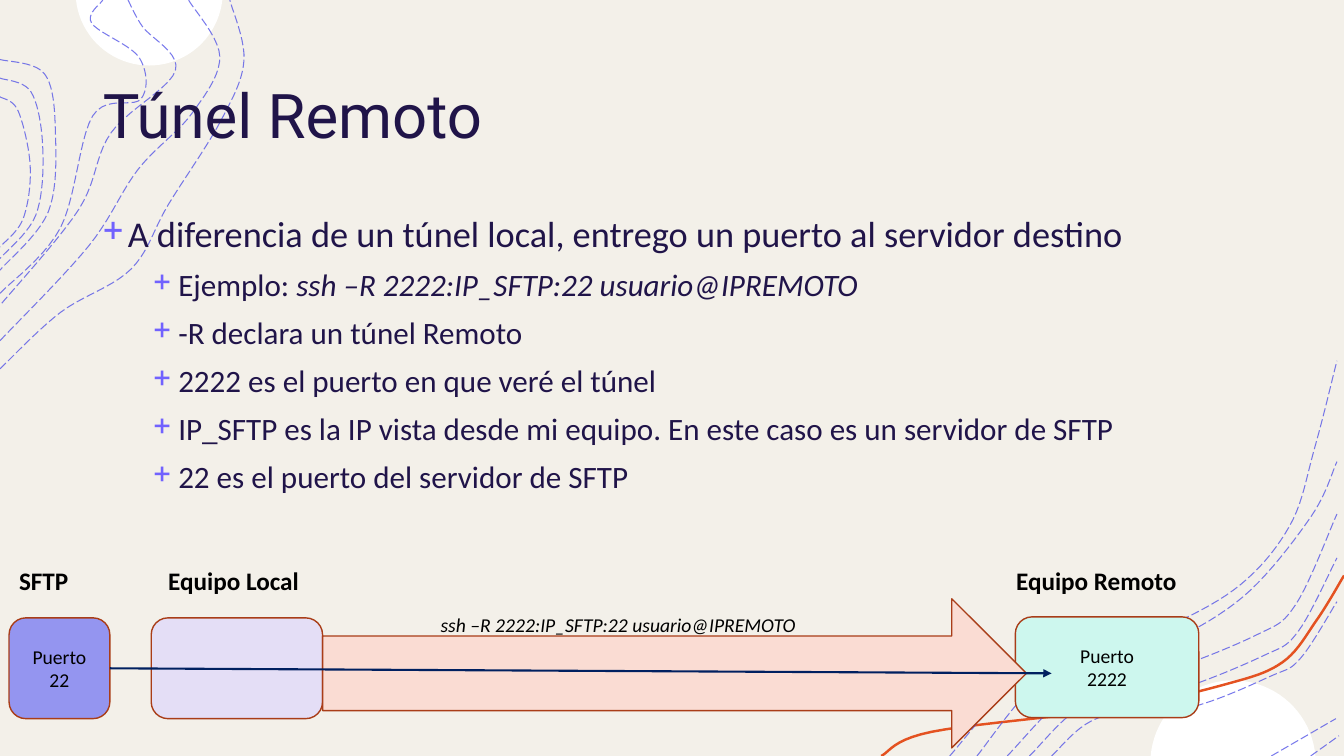
from dataclasses import dataclass
from math import acos, cos, sin

from lxml.etree import SubElement
from pptx import Presentation
from pptx.dml.color import RGBColor
from pptx.enum.dml import MSO_LINE
from pptx.enum.shapes import MSO_CONNECTOR, MSO_SHAPE
from pptx.enum.text import MSO_ANCHOR, PP_ALIGN
from pptx.oxml.ns import qn
from pptx.util import Inches, Pt


@dataclass(frozen=True)
class Theme:
    background: str = "F3F0E9"
    white: str = "FFFFFF"
    contour: str = "4D4EE6"
    ribbon: str = "E45221"
    ink: str = "201449"
    bullet: str = "7162FE"
    black: str = "000000"
    outline: str = "A93D18"
    flow: str = "002060"
    sftp: str = "9495F0"
    local: str = "E4DEF6"
    remote: str = "CDF7EE"
    tunnel: str = "FADCD3"
    heading_font: str = "Roboto"
    body_font: str = "Calibri"
    title_size: float = 44
    lead_size: float = 25.9
    item_size: float = 22.2
    label_size: float = 18
    small_size: float = 14


THEME = Theme()
COMMAND = "ssh –R 2222:IP_SFTP:22\u00a0usuario@IPREMOTO"

# Each line of the body: level, then its pieces; the command is set in italics
BODY = [
    (0, ["A diferencia de un túnel local, entrego un puerto al servidor destino"]),
    (1, ["Ejemplo: ", COMMAND]),
    (1, ["-R declara un túnel Remoto"]),
    (1, ["2222 es el puerto en que veré el túnel"]),
    (1, ["IP_SFTP es la IP vista desde mi equipo. En este caso es un servidor de SFTP"]),
    (1, ["22 es el puerto del servidor de SFTP"]),
]

# Contour families: number of lines, first line, last line (points in inches)
CONTOUR_FAMILIES = [
    # Upper left corner
    (1, [(0, 3.66), (.6, 3.1), (1.3, 2.67), (1.67, 2.03), (2.19, 1.2), (2.42, .6), (2.28, 0)], None),
    (1, [(0, 3.38), (.88, 2.44), (1.37, 1.68), (1.9, 1.13), (2.18, .56), (1.87, 0)], None),
    (1, [(1.27, 0), (1.41, .26), (1.74, .7), (1.1, 1.32), (.78, 2.08), (0, 3.03)], None),
    (1, [(0, 2.91), (.6, 2.26), (.92, 1.15), (1.4, .98), (1.38, .57), (.91, .23), (1.02, 0)], None),
    (3, [(0, .59), (.44, .73), (.55, 1.3), (.48, 2.1), (0, 2.68)],
     [(0, .96), (.18, 1.1), (.3, 1.65), (.23, 2.17), (0, 2.45)]),
    # Lower right corner
    (1, [(9.42, 7.5), (10.1, 6.75), (10.95, 6.25), (11.37, 6.29), (12.24, 5.85), (12.79, 5.22),
         (13.04, 4.44), (13.26, 3.58)], None),
    (1, [(9.69, 7.5), (10.3, 6.76), (11, 6.38), (11.5, 6.4), (12.33, 5.92), (13, 5.13),
         (13.26, 4.58)], None),
    (3, [(9.99, 7.5), (10.71, 6.8), (11.43, 6.7), (12.44, 6.31), (12.85, 6), (13.26, 5.1)],
     [(10.43, 7.5), (10.9, 7.12), (11.8, 7.02), (12.6, 6.71), (12.9, 6.53), (13.26, 5.97)]),
    (2, [(12.61, 7.5), (13.25, 7.13)], [(13, 7.5), (13.28, 7.3)]),
]
RIBBON = [(8.74, 7.5), (9.24, 7.26), (11.05, 7.03), (12.15, 6.79), (12.72, 6.57), (13.06, 6.15),
          (13.33, 5.71)]


def color(value):
    return RGBColor.from_string(value)


def blend(first, last, share):
    """Curve that lies between two curves with equally many points."""
    return [tuple(p + (q - p) * share for p, q in zip(a, b)) for a, b in zip(first, last)]


def smooth_curve(points, steps=10):
    """Catmull-Rom curve through the points."""
    padded = [points[0], *points, points[-1]]
    curve = [points[0]]
    for a, b, c, d in zip(padded, padded[1:], padded[2:], padded[3:]):
        for step in range(1, steps + 1):
            t = step / steps
            curve.append(tuple(
                (2 * q + (r - p) * t + (2 * p - 5 * q + 4 * r - s) * t ** 2
                 + (3 * q - p - 3 * r + s) * t ** 3) / 2
                for p, q, r, s in zip(a, b, c, d)))
    return curve


def add_outline(slide, points, close=False):
    corners = [(Inches(x), Inches(y)) for x, y in points]
    builder = slide.shapes.build_freeform(*corners[0])
    builder.add_line_segments(corners[1:], close=close)
    shape = builder.convert_to_shape()
    shape.shadow.inherit = False
    return shape


def add_curve(slide, points, line_color, width, dashed=False):
    shape = add_outline(slide, smooth_curve(points))
    shape.fill.background()
    shape.line.color.rgb = color(line_color)
    shape.line.width = Pt(width)
    if dashed:
        shape.line.dash_style = MSO_LINE.LONG_DASH
        stroke = shape.element.find(".//" + qn("a:ln")).find(".//" + qn("a:srgbClr"))
        SubElement(stroke, qn("a:alpha"), val="75000")


def add_cut_circle(slide, center_x, center_y, radius, edge, direction):
    """Part of a circle beyond a horizontal edge; direction 1 is below, -1 above."""
    half = acos((edge - center_y) * direction / radius)
    angles = [half * (step / 20 - 1) for step in range(41)]
    points = [(center_x + radius * sin(angle), center_y + direction * radius * cos(angle))
              for angle in angles]
    shape = add_outline(slide, points, close=True)
    shape.fill.solid()
    shape.fill.fore_color.rgb = color(THEME.white)
    shape.line.fill.background()


def format_runs(paragraph, size, text_color, font=THEME.body_font, bold=False, italic=False):
    for run in paragraph.runs:
        run.font.name = font
        run.font.size = Pt(size)
        run.font.bold = bold
        run.font.italic = italic
        run.font.color.rgb = color(text_color)


def add_box(slide, preset, left, top, width, height, fill, text=""):
    shape = slide.shapes.add_shape(preset, Inches(left), Inches(top), Inches(width), Inches(height))
    shape.shadow.inherit = False
    shape.fill.solid()
    shape.fill.fore_color.rgb = color(fill)
    shape.line.color.rgb = color(THEME.outline)
    shape.line.width = Pt(1)
    if text:
        shape.text_frame.text = text
        shape.text_frame.vertical_anchor = MSO_ANCHOR.MIDDLE
        for paragraph in shape.text_frame.paragraphs:
            paragraph.alignment = PP_ALIGN.CENTER
            format_runs(paragraph, THEME.small_size, THEME.black)
    return shape


def add_text(slide, left, top, width, height, text, size=THEME.label_size, **style):
    box = slide.shapes.add_textbox(Inches(left), Inches(top), Inches(width), Inches(height))
    box.text_frame.word_wrap = True
    box.text_frame.text = text
    format_runs(box.text_frame.paragraphs[0], size, THEME.black, **style)
    return box.text_frame


def add_plus_bullet(paragraph):
    properties = paragraph._p.get_or_add_pPr()
    properties.set("marL", str(Inches(0.25 + 0.5 * paragraph.level)))
    properties.set("indent", str(-Inches(0.25)))
    SubElement(SubElement(properties, qn("a:buClr")), qn("a:srgbClr"), val=THEME.bullet)
    SubElement(properties, qn("a:buChar"), char="+")


def add_body(slide):
    text_frame = add_text(slide, 0.92, 2, 11.44, 3.62, "")
    for index, (level, pieces) in enumerate(BODY):
        paragraph = text_frame.add_paragraph() if index else text_frame.paragraphs[0]
        paragraph.level = level
        paragraph.line_spacing = 1.1
        paragraph.space_before = Pt(5 if level else 10)
        for piece in pieces:
            paragraph.add_run().text = piece
        format_runs(paragraph, THEME.item_size if level else THEME.lead_size, THEME.ink)
        for run in paragraph.runs:
            run.font.italic = run.text == COMMAND
        add_plus_bullet(paragraph)


def add_flow_arrow(slide, source):
    connector = slide.shapes.add_connector(
        MSO_CONNECTOR.STRAIGHT, Inches(1.09), Inches(6.63), Inches(10.43), Inches(6.68))
    connector.begin_connect(source, 3)
    connector.line.color.rgb = color(THEME.flow)
    connector.line.width = Pt(1.5)
    SubElement(connector.element.find(".//" + qn("a:ln")), qn("a:tailEnd"), type="triangle")
    SubElement(connector.element.spPr, qn("a:effectLst"))


def add_title(slide, text):
    title = slide.shapes.title
    title.left, title.top, title.width, title.height = map(Inches, (0.92, 0.4, 11.5, 1.45))
    title.text_frame.text = text
    title.text_frame.vertical_anchor = MSO_ANCHOR.MIDDLE
    paragraph = title.text_frame.paragraphs[0]
    paragraph.alignment = PP_ALIGN.LEFT
    format_runs(paragraph, THEME.title_size, THEME.ink, font=THEME.heading_font)
    # Bring the title in front of the decoration
    title.element.getparent().append(title.element)


def add_decoration(slide):
    slide.background.fill.solid()
    slide.background.fill.fore_color.rgb = color(THEME.background)
    add_cut_circle(slide, 1.48, -0.08, 0.73, 0, 1)
    add_cut_circle(slide, 12.23, 7.57, 0.82, 7.5, -1)
    add_curve(slide, RIBBON, THEME.ribbon, 1.75)
    for count, first, last in CONTOUR_FAMILIES:
        for index in range(count):
            points = blend(first, last, index / (count - 1)) if last else first
            add_curve(slide, points, THEME.contour, 0.75, dashed=True)


def add_tunnel_diagram(slide):
    rounded = MSO_SHAPE.ROUNDED_RECTANGLE
    add_box(slide, rounded, 1.5, 6.13, 1.7, 1, THEME.local)
    add_box(slide, rounded, 10.07, 6.12, 1.82, 1, THEME.remote, "Puerto\n2222")
    for left, width, name in ((0.09, 1.12, "SFTP"), (1.57, 3, "Equipo Local"),
                              (9.98, 3, "Equipo Remoto")):
        add_text(slide, left, 5.56, width, 0.4, name, bold=True)
    command = add_text(slide, 3.77, 6.01, 6.3, 0.66, COMMAND, THEME.small_size, italic=True)
    command.margin_left = Inches(0.6)
    command.paragraphs[0].line_spacing = 1.1
    command.paragraphs[0].space_before = Pt(5)
    add_box(slide, MSO_SHAPE.RIGHT_ARROW, 3.2, 5.94, 6.98, 1.48, THEME.tunnel)
    sftp = add_box(slide, rounded, 0.09, 6.13, 1, 1, THEME.sftp, "Puerto\n22")
    add_flow_arrow(slide, sftp)


def main():
    presentation = Presentation()
    presentation.slide_width, presentation.slide_height = Inches(13.33), Inches(7.5)
    slide = presentation.slides.add_slide(presentation.slide_layouts[5])
    add_decoration(slide)
    add_title(slide, "Túnel Remoto")
    add_body(slide)
    add_tunnel_diagram(slide)
    presentation.save("out.pptx")


if __name__ == "__main__":
    main()
